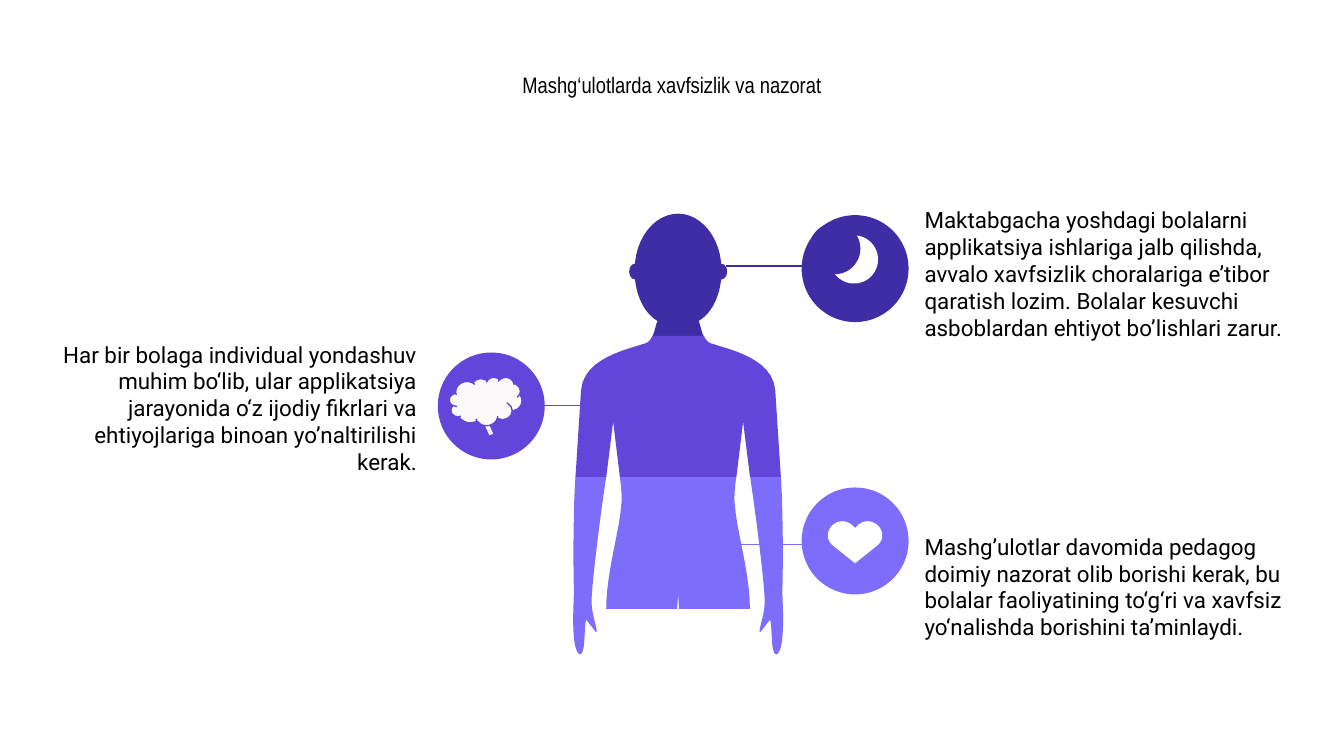
from dataclasses import dataclass

import lxml.etree
import pptx
import pptx.dml.color
import pptx.enum.shapes
import pptx.enum.text
import pptx.oxml.ns
import pptx.util

Pt = pptx.util.Pt
Align = pptx.enum.text.PP_ALIGN
Shape = pptx.enum.shapes.MSO_SHAPE
Point = tuple[float, float]

INDIGO, VIOLET, LAVENDER = "3F2DA5", "6146D9", "7E6CFB"
BLACK, WHITE, OFF_WHITE = "000000", "FFFFFF", "FBF9FA"
BODY_AXIS, RIGHT_BADGES, LEFT_BADGE = 363.3, 458.1, 263.2
BADGE_SIZE = 57.3


@dataclass
class Badge:
    x: float
    y: float
    color: str
    body_edge: float
    line_y: float


@dataclass
class Caption:
    text: str
    left: float
    middle: float
    width: float
    align: Align = Align.LEFT
    font: str = "Roboto"
    height: float = 159


BADGES = [
    Badge(RIGHT_BADGES, 143.9, INDIGO, 388.8, 142.6),
    Badge(RIGHT_BADGES, 289.8, LAVENDER, 393.8, 291.8),
    Badge(LEFT_BADGE, 217.5, VIOLET, 337.7, 217.3),
]

CAPTIONS = [
    Caption("Mashg‘ulotlarda xavfsizlik va nazorat",
            36, 45.4, 648, Align.CENTER, "Arial Narrow", 26),
    Caption("Maktabgacha yoshdagi bolalarni applikatsiya ishlariga jalb qilishda, "
            "avvalo xavfsizlik choralariga e’tibor qaratish lozim. Bolalar kesuvchi "
            "asboblardan ehtiyot bo’lishlari zarur.", 488.2, 146.5, 214.6),
    Caption("Mashg’ulotlar davomida pedagog doimiy nazorat olib borishi kerak, bu "
            "bolalar faoliyatining to‘g‘ri va xavfsiz yo‘nalishda borishini "
            "ta’minlaydi.", 488.2, 314.2, 217.4),
    Caption("Har bir bolaga individual yondashuv muhim bo‘lib, ular applikatsiya "
            "jarayonida o‘z ijodiy fikrlari va ehtiyojlariga binoan yo’naltirilishi "
            "kerak.", 14.4, 218.5, 216, Align.RIGHT),
]

ARM = [(38.5, 255), (41.5, 275, 46, 310, 46.4, 322), (46.4, 330, 42, 340, 44.2, 338.4),
       (49.2, 332), (50.7, 335.5, 49.2, 350.6, 52.8, 350.6),
       (57, 348, 56.4, 330, 55.8, 317.5), (56.4, 300, 56, 268, 55, 255)]
HALF_HIPS = [(0, 318), (0.5, 326.2), (38.5, 326.2),
             (38.5, 307, 31.3, 284, 30.5, 271), (29.8, 267, 30.5, 261, 31.2, 255)]
HALF_TORSO = [(0, 180), (13.9, 180), (15, 183, 17, 184, 18.9, 184.3),
              (26, 187, 50.6, 191.5, 52, 209), (55, 255.5), (38.5, 255.5),
              (34.8, 226), (31.2, 255.5)]
HALF_HEAD = [(0, 114.5), (12, 114.5, 23.3, 127, 23.3, 145),
             (23.3, 158, 18, 168, 11, 172), (12, 174, 12.5, 178, 13.9, 180.5)]
HALF_HEART = [(0, 282.9), (2, 281), (6, 278, 10, 279.3, 12.7, 282),
              (15.6, 285.4, 15, 290.2, 11.5, 292.6), (0, 301.8)]
BRAIN_STEM = [(258.5, 225), (261, 225), (264.2, 232.4), (262.2, 233.2)]


def rgb(color: str) -> pptx.dml.color.RGBColor:
    return pptx.dml.color.RGBColor.from_string(color)


def trace(outline: list[tuple[float, ...]], steps: int = 12) -> list[Point]:
    points = []
    for segment in outline:
        if len(segment) == 2:
            points.append(segment)
            continue
        corners = (points[-1], segment[:2], segment[2:4], segment[4:])
        for step in range(1, steps + 1):
            t = step / steps
            weights = ((1 - t) ** 3, 3 * t * (1 - t) ** 2, 3 * t * t * (1 - t), t ** 3)
            points.append(tuple(sum(w * corner[axis] for w, corner in zip(weights, corners))
                                for axis in (0, 1)))
    return points


def around(axis: float, points: list[Point], side: int = 1) -> list[Point]:
    return [(axis + side * x, y) for x, y in points]


def symmetric(axis: float, half: list[tuple[float, ...]]) -> list[Point]:
    points = trace(half)
    return around(axis, points) + around(axis, points[::-1], -1)


def paint(shape, color: str) -> None:
    shape.shadow.inherit = False
    shape.fill.solid()
    shape.fill.fore_color.rgb = rgb(color)
    shape.line.fill.background()


def draw_outline(slide, points: list[Point], color: str) -> None:
    vertices = [(Pt(x), Pt(y)) for x, y in points]
    builder = slide.shapes.build_freeform(*vertices[0])
    builder.add_line_segments(vertices[1:], close=True)
    paint(builder.convert_to_shape(), color)


def draw_centred(slide, kind: Shape, x: float, y: float, width: float, height: float,
                 color: str):
    shape = slide.shapes.add_shape(kind, Pt(x - width / 2), Pt(y - height / 2),
                                   Pt(width), Pt(height))
    paint(shape, color)
    return shape


def draw_badge(slide, badge: Badge) -> None:
    inward = 1 if badge.body_edge > badge.x else -1
    leader = slide.shapes.add_connector(
        pptx.enum.shapes.MSO_CONNECTOR.STRAIGHT, Pt(badge.body_edge), Pt(badge.line_y),
        Pt(badge.x + inward * BADGE_SIZE / 4), Pt(badge.line_y))
    leader.line.color.rgb = rgb(badge.color)
    leader.line.width = Pt(0.75)
    lxml.etree.SubElement(leader._element.spPr, pptx.oxml.ns.qn("a:effectLst"))
    draw_centred(slide, Shape.OVAL, badge.x, badge.y, BADGE_SIZE, BADGE_SIZE, badge.color)


def draw_body(slide) -> None:
    for side in (1, -1):
        draw_outline(slide, around(BODY_AXIS, trace(ARM), side), LAVENDER)
        draw_centred(slide, Shape.OVAL, BODY_AXIS + side * 23, 145.5, 6.6, 8.6, INDIGO)
    for half, color in ((HALF_HEAD, INDIGO), (HALF_HIPS, LAVENDER), (HALF_TORSO, VIOLET)):
        draw_outline(slide, symmetric(BODY_AXIS, half), color)


def draw_symbols(slide) -> None:
    draw_centred(slide, Shape.OVAL, 457.5, 139, 25.8, 25.8, WHITE)
    draw_centred(slide, Shape.OVAL, 447.2, 133.2, 27.4, 27.4, INDIGO)
    draw_outline(slide, symmetric(RIGHT_BADGES, HALF_HEART), WHITE)
    draw_outline(slide, BRAIN_STEM, OFF_WHITE)
    brain = draw_centred(slide, Shape.CLOUD, 260.2, 215, 39, 26, OFF_WHITE)
    brain.line.color.rgb = rgb(VIOLET)
    brain.line.width = Pt(0.75)


def write_caption(slide, caption: Caption) -> None:
    frame = slide.shapes.add_textbox(
        Pt(caption.left), Pt(caption.middle - caption.height / 2),
        Pt(caption.width), Pt(caption.height)).text_frame
    frame.word_wrap = True
    frame.vertical_anchor = pptx.enum.text.MSO_ANCHOR.MIDDLE
    frame.margin_left = frame.margin_right = Pt(7.2)
    frame.margin_top = frame.margin_bottom = Pt(7.2)
    paragraph = frame.paragraphs[0]
    paragraph.alignment = caption.align
    run = paragraph.add_run()
    run.text = caption.text
    run.font.size = Pt(12)
    run.font.name = caption.font
    run.font.color.rgb = rgb(BLACK)


def main() -> None:
    deck = pptx.Presentation()
    deck.slide_width, deck.slide_height = Pt(720), Pt(405)
    slide = deck.slides.add_slide(deck.slide_layouts[6])
    draw_body(slide)
    for badge in BADGES:
        draw_badge(slide, badge)
    draw_symbols(slide)
    for caption in CAPTIONS:
        write_caption(slide, caption)
    deck.save("out.pptx")


if __name__ == "__main__":
    main()
